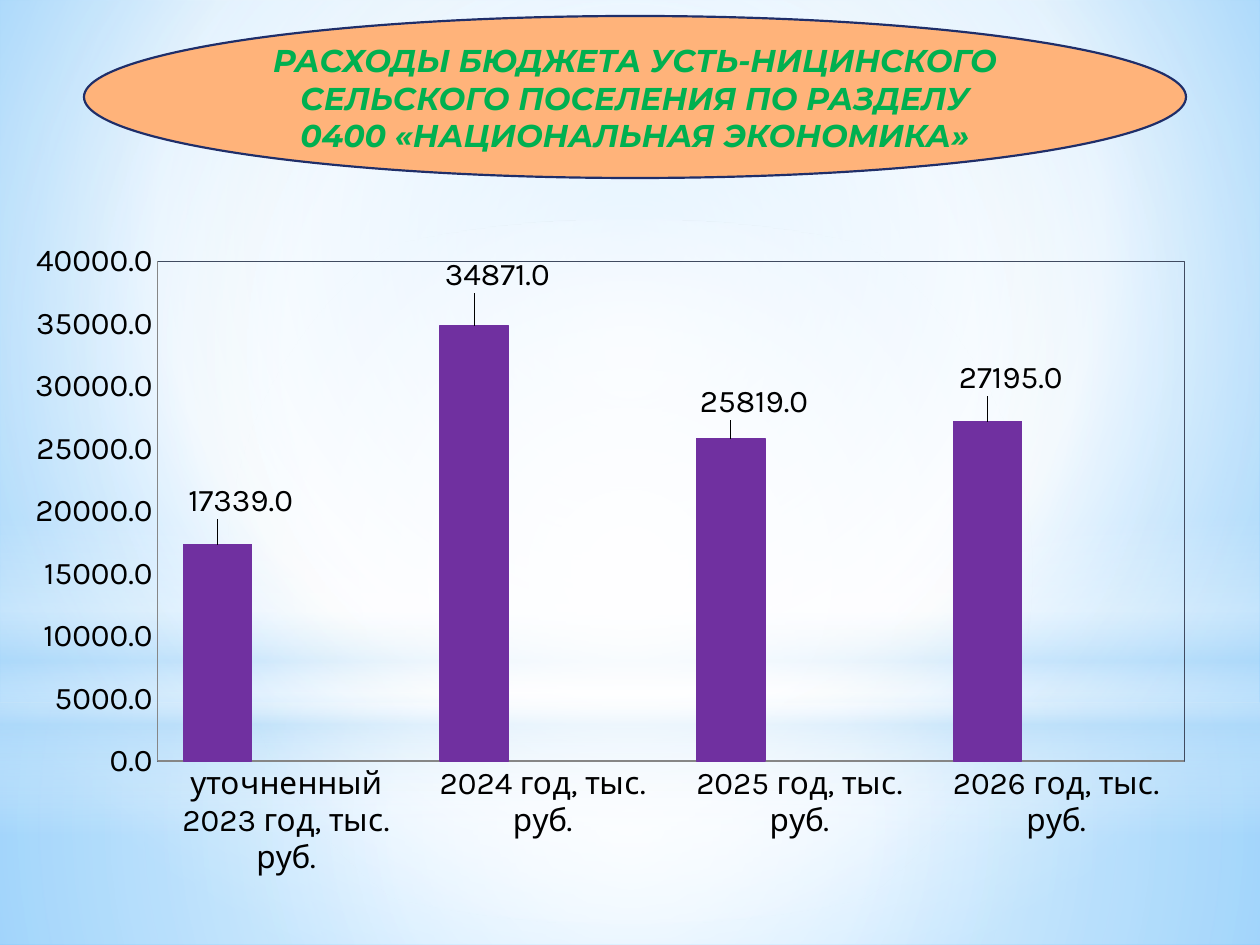
from pptx import Presentation
from pptx.chart.data import CategoryChartData
from pptx.dml.color import RGBColor
from pptx.enum.chart import XL_CHART_TYPE, XL_LABEL_POSITION, XL_TICK_MARK
from pptx.enum.shapes import MSO_SHAPE
from pptx.enum.text import MSO_ANCHOR, MSO_AUTO_SIZE, PP_ALIGN
from pptx.oxml import parse_xml
from pptx.oxml.ns import nsdecls, qn
from pptx.util import Emu, Pt

THEME = {
    "banner": "FFB37A", "banner_line": "1F2E69", "title": "00B050",
    "bar": "7030A0", "label": "FFC000", "text": "000000",
    "axis": "868686", "frame": "404B60",
    "title_font": "Montserrat", "chart_font": "Karla", "size": Pt(18),
}
PX = 914400 / 126


def px(*lengths):
    return [Emu(round(length * PX)) for length in lengths]


def set_gradient(holder, stops, direction):
    """Replace the solid fill in holder; stops are (position, colour, opacity) in percent."""
    stop_xml = "".join(
        f'<a:gs pos="{position * 1000}"><a:srgbClr val="{colour}">'
        f'<a:alpha val="{opacity * 1000}"/></a:srgbClr></a:gs>'
        for position, colour, opacity in stops)
    solid = holder.find(qn("a:solidFill"))
    holder.replace(solid, parse_xml(
        f'<a:gradFill {nsdecls("a")} rotWithShape="1"><a:gsLst>{stop_xml}</a:gsLst>'
        f'{direction}</a:gradFill>'))


deck = Presentation()
deck.slide_width, deck.slide_height = px(1260, 945)
page = deck.slides.add_slide(deck.slide_layouts[5])

# Background and its soft light layers
CIRCLE = '<a:path path="circle"><a:fillToRect l="{}000" t="{}000" r="{}000" b="{}000"/></a:path>'
CENTRE = CIRCLE.format(50, 50, 50, 50)
DOWN = '<a:lin ang="5400000" scaled="0"/>'

page.background.fill.solid()
page.background.fill.fore_color.rgb = RGBColor.from_string("FFFFFF")
set_gradient(page.element.find(".//" + qn("p:bgPr")),
             [(0, "9ED5FF", 100), (60, "FFFFFF", 100), (100, "5BB9FF", 100)],
             CIRCLE.format(20, 10, 20, 60))

light_layers = [
    (MSO_SHAPE.RECTANGLE, (0, 703, 1260, 242), CENTRE,
     [(0, "FFFFFF", 91), (37, "FFFFFF", 76), (100, "B4DCFA", 79)]),
    (MSO_SHAPE.RECTANGLE, (0, 0, 1260, 703), CENTRE,
     [(0, "FFFFFF", 89), (48, "FFFFFF", 62), (100, "B4DCFA", 79)]),
    (MSO_SHAPE.RECTANGLE, (0, 519, 1260, 315), DOWN,
     [(0, "FFFFFF", 0), (29, "FFFFFF", 30), (45, "B4DCFA", 40),
      (55, "FFFFFF", 26), (65, "B4DCFA", 60), (100, "FFFFFF", 0)]),
    (MSO_SHAPE.OVAL, (0, 220, 1260, 703), CENTRE,
     [(0, "FFFFFF", 100), (56, "FFFFFF", 0)]),
]
for kind, place, direction, stops in light_layers:
    layer = page.shapes.add_shape(kind, *px(*place))
    layer.shadow.inherit = False
    layer.line.fill.background()
    layer.fill.solid()
    set_gradient(layer.element.spPr, stops, direction)

# Column chart; two empty series keep the bars at the left of each category
data = CategoryChartData(number_format="0.0")
data.categories = ["уточненный 2023 год, тыс. руб.", "2024 год, тыс. руб.",
                   "2025 год, тыс. руб.", "2026 год, тыс. руб."]
data.add_series("Series 1", [17339, 34871, 25819, 27195])
data.add_series("Series 2", [None] * 4)
data.add_series("Series 3", [None] * 4)
chart = page.shapes.add_chart(
    XL_CHART_TYPE.COLUMN_CLUSTERED, *px(35, 234, 1160, 668), data).chart
chart.has_legend = False
chart.has_title = False
chart.font.name = THEME["chart_font"]
chart.font.size = THEME["size"]
chart.font.color.rgb = RGBColor.from_string(THEME["text"])

for axis in (chart.category_axis, chart.value_axis):
    axis.has_major_gridlines = False
    axis.major_tick_mark = XL_TICK_MARK.NONE
    axis.minor_tick_mark = XL_TICK_MARK.NONE
    axis.format.line.color.rgb = RGBColor.from_string(THEME["axis"])
    axis.format.line.width = Pt(0.75)
chart.value_axis.minimum_scale = 0
chart.value_axis.maximum_scale = 40000
chart.value_axis.major_unit = 5000
chart.value_axis.tick_labels.number_format = "0.0"
chart.value_axis.tick_labels.number_format_is_linked = False

plot = chart.plots[0]
plot.vary_by_categories = False
plot.gap_width = 75
plot.overlap = 0

plot_area = chart.element.find(".//" + qn("c:plotArea"))
for old_layout in plot_area.findall(qn("c:layout")):
    plot_area.remove(old_layout)
plot_area.insert(0, parse_xml(
    f'<c:layout {nsdecls("c")}><c:manualLayout><c:layoutTarget val="inner"/>'
    '<c:xMode val="edge"/><c:yMode val="edge"/><c:x val="0.105"/><c:y val="0.041"/>'
    '<c:w val="0.886"/><c:h val="0.748"/></c:manualLayout></c:layout>'))
plot_area.append(parse_xml(
    f'<c:spPr {nsdecls("c", "a")}><a:noFill/><a:ln w="9525"><a:solidFill>'
    f'<a:srgbClr val="{THEME["frame"]}"/></a:solidFill></a:ln></c:spPr>'))

bars = plot.series[0]
bars.format.fill.solid()
bars.format.fill.fore_color.rgb = RGBColor.from_string(THEME["bar"])
bars.format.line.color.rgb = RGBColor.from_string(THEME["bar"])
bars.format.line.width = Pt(0.75)
bars.data_labels.show_value = True
bars.data_labels.number_format = "0.0"
bars.data_labels.number_format_is_linked = False

# Each label is nudged from its bar's end by a share of the chart's size
label_shifts = [(0.02, -0.03), (0.02, -0.04), (0.02, -0.02), (0.02, -0.03)]
for index, (right, down) in enumerate(label_shifts):
    bars.points[index].data_label.position = XL_LABEL_POSITION.OUTSIDE_END
    label = bars.data_labels._element.findall(qn("c:dLbl"))[index]
    extras = [
        f'<c:layout {nsdecls("c")}><c:manualLayout><c:x val="{right}"/>'
        f'<c:y val="{down}"/></c:manualLayout></c:layout>',
        f'<c:numFmt {nsdecls("c")} formatCode="0.0" sourceLinked="0"/>',
        f'<c:spPr {nsdecls("c", "a")}><a:solidFill><a:srgbClr val="{THEME["label"]}"/>'
        '</a:solidFill></c:spPr>',
    ]
    for position, extra in enumerate(extras, start=1):
        label.insert(position, parse_xml(extra))

# Title on its oval banner
banner = page.shapes.add_shape(MSO_SHAPE.OVAL, *px(84, 16, 1102, 162))
banner.shadow.inherit = False
banner.fill.solid()
banner.fill.fore_color.rgb = RGBColor.from_string(THEME["banner"])
banner.line.color.rgb = RGBColor.from_string(THEME["banner_line"])
banner.line.width = Pt(1.25)

title = page.shapes.title
title.left, title.top, title.width, title.height = px(245, 40, 780, 115)
banner.element.addnext(title.element)
frame = title.text_frame
frame.text = ("РАСХОДЫ БЮДЖЕТА УСТЬ-НИЦИНСКОГО СЕЛЬСКОГО ПОСЕЛЕНИЯ "
              "ПО РАЗДЕЛУ 0400 «НАЦИОНАЛЬНАЯ ЭКОНОМИКА»")
frame.word_wrap = True
frame.auto_size = MSO_AUTO_SIZE.NONE
frame.vertical_anchor = MSO_ANCHOR.MIDDLE
frame.margin_top = frame.margin_bottom = 0
frame.paragraphs[0].alignment = PP_ALIGN.CENTER
font = frame.paragraphs[0].runs[0].font
font.name = THEME["title_font"]
font.size = THEME["size"]
font.bold = font.italic = True
font.color.rgb = RGBColor.from_string(THEME["title"])

deck.save("out.pptx")
